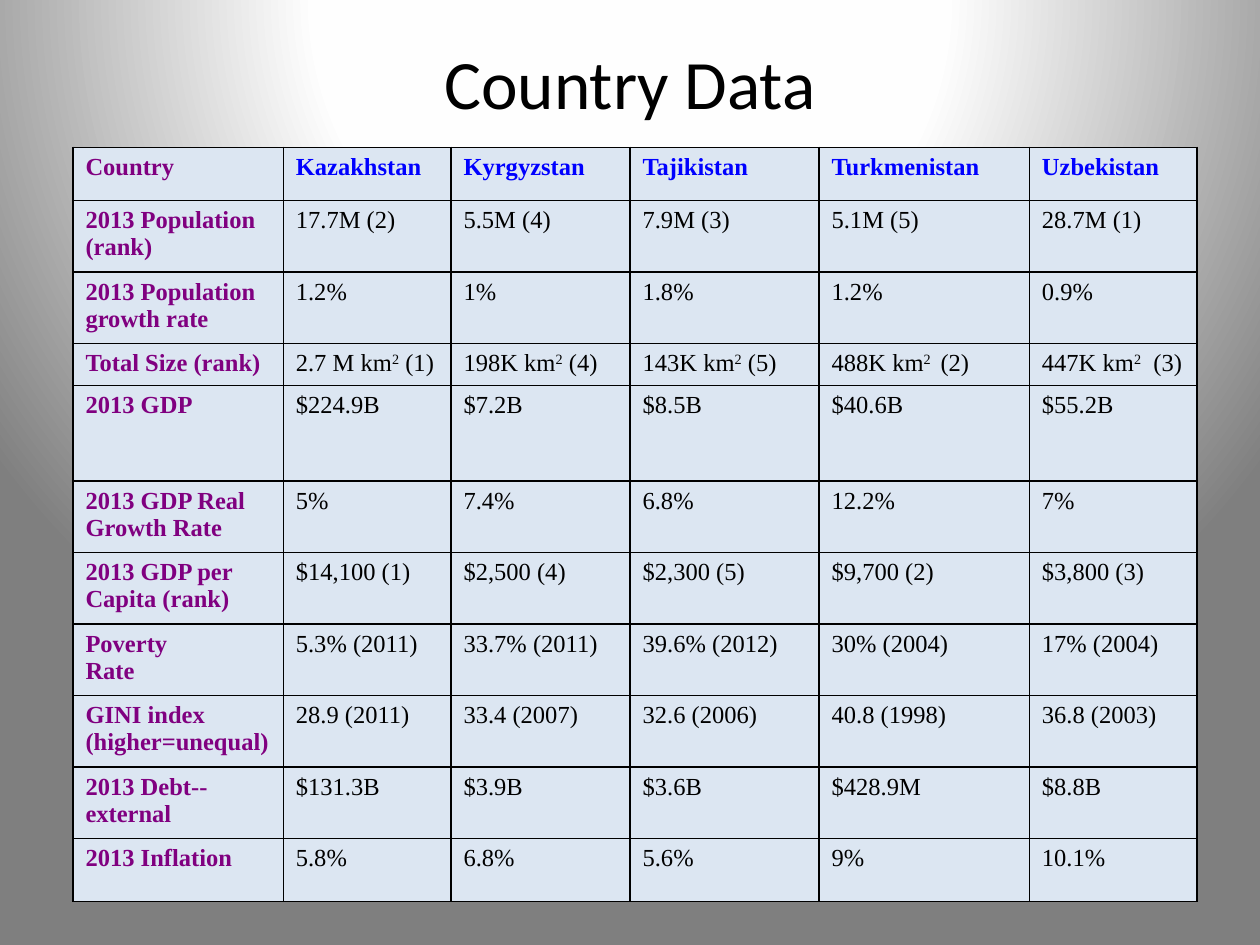
from dataclasses import dataclass

from pptx import Presentation
from pptx import util as u
from pptx.dml.color import RGBColor
from pptx.enum import text
from pptx.oxml import parse_xml
from pptx.oxml.ns import nsdecls, qn


@dataclass(frozen=True)
class Theme:
    title_font: str = "Calibri"
    table_font: str = "Times New Roman"
    title_size: float = 39.6
    table_size: float = 14
    border_width: float = 1
    black: str = "000000"
    label: str = "800080"
    country: str = "0000FF"
    cell: str = "DCE6F2"
    background: tuple = ((0, "FFFFFF"), (40, "FEFEFE"), (100, "7F7F7F"))


COLUMN_WIDTHS = [4.24, 3.38, 3.61, 3.81, 4.24, 3.38]
ROW_HEIGHTS = [1.07, 0.64, 0.64, 0.84, 1.93, 0.76, 0.79, 0.76, 1.27, 1.27, 1.27]
SUPERSCRIPT_MARK = "^"
COUNTRY_DATA = [
    ["Country", "Kazakhstan", "Kyrgyzstan", "Tajikistan", "Turkmenistan", "Uzbekistan"],
    ["2013 Population (rank)", "17.7M (2)", "5.5M (4)", "7.9M (3)", "5.1M (5)", "28.7M (1)"],
    ["2013 Population growth rate", "1.2%", "1%", "1.8%", "1.2%", "0.9%"],
    ["Total Size (rank)", "2.7 M km^2^ (1)", "198K km^2^ (4)", "143K km^2^ (5)",
     "488K km^2 ^ (2)", "447K km^2^  (3)"],
    ["2013 GDP", "$224.9B", "$7.2B", "$8.5B", "$40.6B", "$55.2B"],
    ["2013 GDP Real\nGrowth Rate", "5%", "7.4%", "6.8%", "12.2%", "7%"],
    ["2013 GDP per\nCapita (rank)", "$14,100 (1)", "$2,500 (4)", "$2,300 (5)",
     "$9,700 (2)", "$3,800 (3)"],
    ["Poverty\nRate", "5.3% (2011)", "33.7% (2011)", "39.6% (2012)", "30% (2004)", "17% (2004)"],
    ["GINI index (higher=unequal)", "28.9 (2011)", "33.4 (2007)", "32.6 (2006)",
     "40.8 (1998)", "36.8 (2003)"],
    ["2013 Debt--external", "$131.3B", "$3.9B", "$3.6B", "$428.9M", "$8.8B"],
    ["2013 Inflation", "5.8%", "6.8%", "5.6%", "9%", "10.1%"],
]


class SlideBuilder:
    def __init__(self, slide, theme):
        self.slide = slide
        self.theme = theme

    def background(self):
        self.slide.background.fill.solid()
        properties = self.slide.element.cSld.find(qn("p:bg")).find(qn("p:bgPr"))
        stops = "".join(
            f'<a:gs pos="{position * 1000}"><a:srgbClr val="{color}"/></a:gs>'
            for position, color in self.theme.background
        )
        gradient = parse_xml(
            f'<a:gradFill {nsdecls("a")} rotWithShape="1"><a:gsLst>{stops}</a:gsLst>'
            '<a:path path="circle"><a:fillToRect l="50000" t="-80000" r="50000" b="180000"/>'
            "</a:path></a:gradFill>"
        )
        properties.replace(properties.find(qn("a:solidFill")), gradient)

    def format_run(self, run, font, size, color, bold=False):
        run.font.name = font
        run.font.size = u.Pt(size)
        run.font.bold = bold
        run.font.color.rgb = RGBColor.from_string(color)

    def title(self, wording, left, top, width, height):
        shape = self.slide.shapes.add_textbox(u.Cm(left), u.Cm(top), u.Cm(width), u.Cm(height))
        frame = shape.text_frame
        frame.word_wrap = True
        frame.vertical_anchor = text.MSO_ANCHOR.MIDDLE
        frame.text = wording
        paragraph = frame.paragraphs[0]
        paragraph.alignment = text.PP_ALIGN.CENTER
        self.format_run(paragraph.runs[0], self.theme.title_font,
                        self.theme.title_size, self.theme.black)

    def borders(self, cell):
        properties = cell._tc.get_or_add_tcPr()
        for side in ("lnL", "lnR", "lnT", "lnB"):
            properties.append(parse_xml(
                f'<a:{side} {nsdecls("a")} w="{u.Pt(self.theme.border_width)}"><a:solidFill>'
                f'<a:srgbClr val="{self.theme.black}"/></a:solidFill></a:{side}>'
            ))

    def cell(self, cell, wording, color, bold, hanging):
        self.borders(cell)
        cell.fill.solid()
        cell.fill.fore_color.rgb = RGBColor.from_string(self.theme.cell)
        cell.text_frame.text = wording.replace(SUPERSCRIPT_MARK, "")
        for paragraph, line in zip(cell.text_frame.paragraphs, wording.split("\n")):
            if hanging:
                properties = paragraph._p.get_or_add_pPr()
                properties.set("marL", str(u.Cm(0.97)))
                properties.set("indent", str(-u.Cm(0.97)))
            parts = line.split(SUPERSCRIPT_MARK)
            paragraph.runs[0].text = parts[0]
            for part in parts[1:]:
                paragraph.add_run().text = part
            for index, run in enumerate(paragraph.runs):
                self.format_run(run, self.theme.table_font, self.theme.table_size, color, bold)
                if index % 2:
                    run.font._element.set("baseline", "30000")

    def table(self, rows, widths, heights, left, top, height):
        frame = self.slide.shapes.add_table(
            len(rows), len(widths), u.Cm(left), u.Cm(top), u.Cm(sum(widths)), u.Cm(height))
        table = frame.table
        table.first_row = table.horz_banding = False
        for column, width in zip(table.columns, widths):
            column.width = u.Cm(width)
        for row, row_height in zip(table.rows, heights):
            row.height = u.Cm(row_height)
        frame.height = u.Cm(height)
        for row_index, row in enumerate(rows):
            for column_index, wording in enumerate(row):
                is_label, is_header = column_index == 0, row_index == 0
                color = (self.theme.label if is_label
                         else self.theme.country if is_header else self.theme.black)
                self.cell(table.cell(row_index, column_index), wording, color,
                          bold=is_label or is_header, hanging=is_header and not is_label)


def main():
    presentation = Presentation()
    presentation.slide_width, presentation.slide_height = u.Cm(25.4), u.Cm(19.05)
    slide = presentation.slides.add_slide(presentation.slide_layouts[6])
    builder = SlideBuilder(slide, Theme())
    builder.background()
    builder.title("Country Data", 1.27, 0.76, 22.86, 1.78)
    builder.table(COUNTRY_DATA, COLUMN_WIDTHS, ROW_HEIGHTS, 1.47, 2.97, 15.16)
    presentation.save("out.pptx")


if __name__ == "__main__":
    main()
